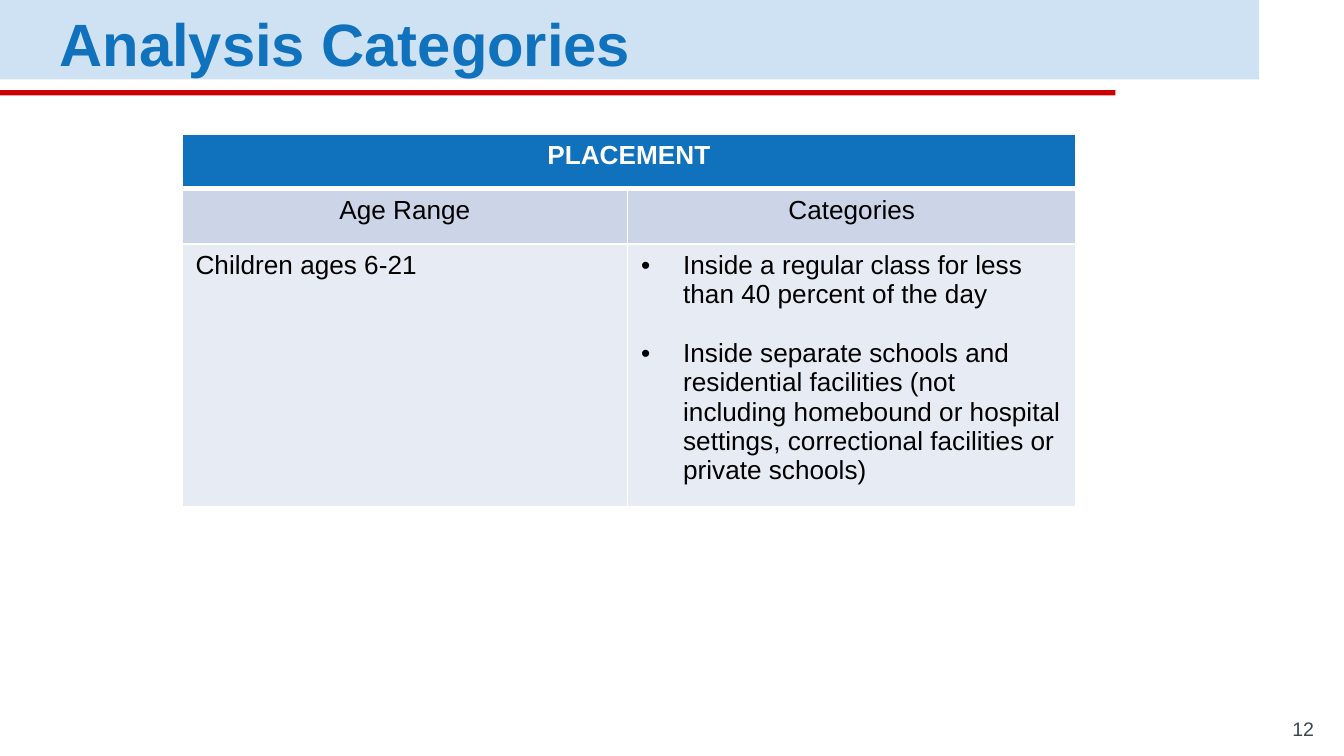
from lxml.etree import SubElement as Sub
from pptx import Presentation
from pptx.dml.color import RGBColor
from pptx.enum.shapes import MSO_SHAPE as Shape
from pptx.enum.text import MSO_ANCHOR as Anchor, PP_ALIGN as Align
from pptx.oxml.ns import qn
from pptx.util import Inches, Pt

deck = Presentation()
deck.slide_width = Inches(10)
deck.slide_height = deck.slide_width * 9 // 16
slide = deck.slides.add_slide(deck.slide_layouts[6])
unit = deck.slide_width // 100


def grid(*cells):
    return [round(n * unit) for n in cells]


def write(para, text, size, color, bold=False):
    run = para.add_run()
    run.text = text
    run.font.name, run.font.size, run.font.bold = "Arial", Pt(size), bold
    run.font.color.rgb = RGBColor.from_string(color)


for top, width, height, color in [(0, 93.7, 5.9, "CFE2F3"), (6.7, 83, 0.4, "CC0000")]:
    band = slide.shapes.add_shape(Shape.RECTANGLE, *grid(0, top, width, height))
    band.shadow.inherit = False
    band.fill.solid()
    band.fill.fore_color.rgb = RGBColor.from_string(color)
    band.line.fill.background()

labels = [
    ((3.45, 0.3, 90.25, 4.9), "Analysis Categories", 32, "1071BD", True, Anchor.MIDDLE, Align.LEFT),
    ((92.75, 53.35, 6, 2.6), "12", 10.5, "3A4950", False, Anchor.BOTTOM, Align.RIGHT),
]
for place, text, size, color, bold, anchor, align in labels:
    frame = slide.shapes.add_textbox(*grid(*place)).text_frame
    frame.word_wrap = True
    frame.vertical_anchor = anchor
    frame.margin_left = frame.margin_right = frame.margin_top = frame.margin_bottom = unit
    para = frame.paragraphs[0]
    para.alignment = align
    if bold:
        para.line_spacing, para.space_after = 1.15, Pt(16)
    write(para, text, size, color, bold)

rows = [
    (4.05, "1071BD", [["PLACEMENT"], []]),
    (4.1, "CCD5E8", [["Age Range"], ["Categories"]]),
    (4.1, "E7EBF4", [["Children ages 6-21"], [
        "Inside a regular class for less than 40 percent of the day",
        "Inside separate schools and residential facilities (not including homebound "
        "or hospital settings, correctional facilities or private schools)",
    ]]),
]
table = slide.shapes.add_table(3, 2, *grid(13.55, 10, 66.5, 26.5)).table
for col, width in zip(table.columns, grid(33.15, 33.35)):
    col.width = width
table.cell(0, 0).merge(table.cell(0, 1))

for i, (height, color, texts) in enumerate(rows):
    table.rows[i].height = grid(height)[0]
    for j, lines in enumerate(texts):
        cell = table.cell(i, j)
        props = cell._tc.get_or_add_tcPr()
        for side in "LRTB":
            thick = (i, side) in [(0, "B"), (1, "T")]
            edge = Sub(props, qn(f"a:ln{side}"), w=str(Pt(3 if thick else 1)))
            Sub(Sub(edge, qn("a:solidFill")), qn("a:srgbClr"), val="FFFFFF")
        cell.fill.solid()
        cell.fill.fore_color.rgb = RGBColor.from_string(color)
        for k, line in enumerate(lines):
            frame = cell.text_frame
            para = frame.add_paragraph() if k else frame.paragraphs[0]
            para.alignment = Align.LEFT if i == 2 else Align.CENTER
            if k:
                para.space_before = Pt(15.7)
            if len(lines) > 1:
                style = para._p.get_or_add_pPr()
                dent = grid(3.13)[0]
                style.set("marL", str(dent))
                style.set("indent", str(-dent))
                Sub(style, qn("a:buFont"), typeface="Arial")
                Sub(style, qn("a:buChar"), char="•")
            write(para, line, 14, "000000" if i else "FFFFFF", i == 0)

deck.save("out.pptx")
